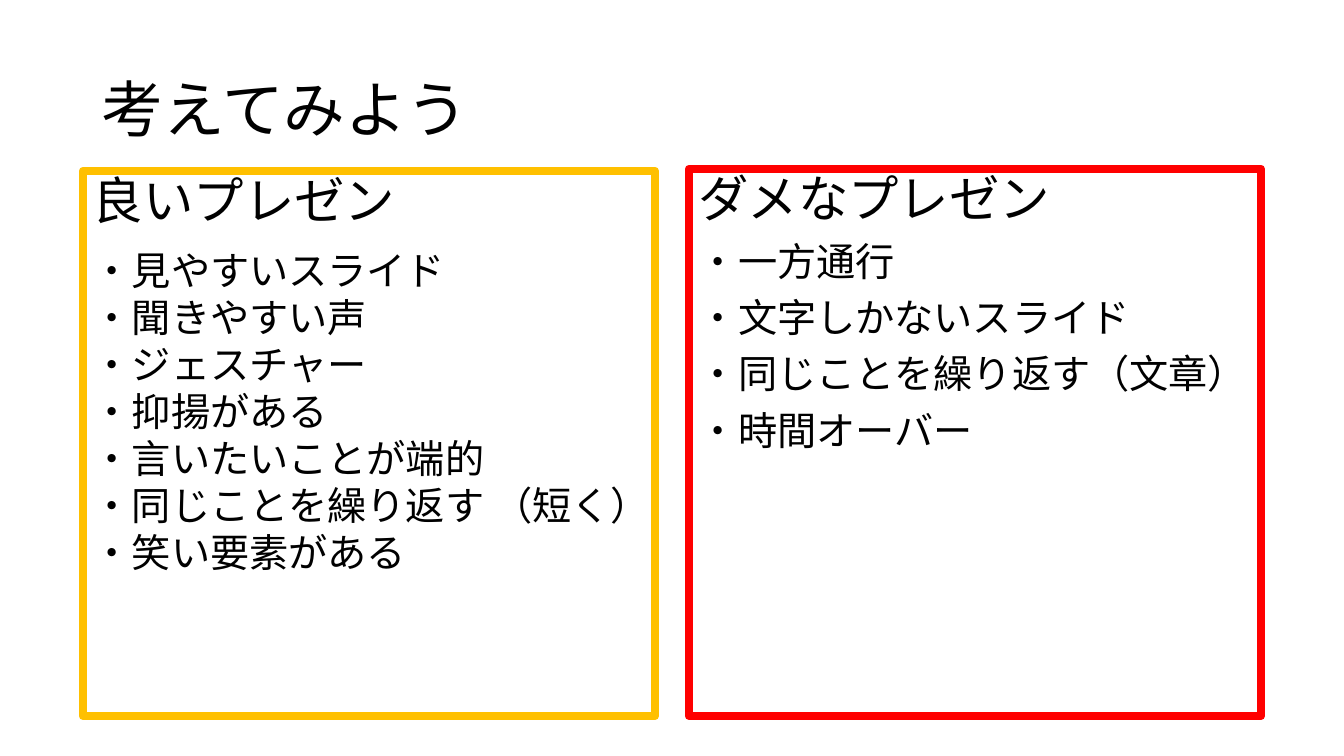
from pptx import Presentation
from pptx import util as u
from pptx.dml.color import RGBColor
from pptx.enum import shapes, text
from pptx.oxml.ns import qn
from lxml import etree

PX = 914400 / 100.8
FONT = "Noto Sans CJK JP"
COLORS = {"ink": "000000", "good": "FFC000", "bad": "FF0000"}

GOOD_POINTS = ["・見やすいスライド", "・聞きやすい声", "・ジェスチャー", "・抑揚がある",
               "・言いたいことが端的", "・同じことを繰り返す （短く）", "・笑い要素がある"]
BAD_POINTS = ["・一方通行", "・文字しかないスライド", "・同じことを繰り返す（文章）", "・時間オーバー"]


def px(length):
    return u.Emu(round(length * PX))


def color(name):
    return RGBColor.from_string(COLORS[name])


def write_lines(shape, lines, spacing=0.9, before=10, anchor=text.MSO_ANCHOR.TOP):
    """Fill a shape with (wording, point size) lines, one paragraph each."""
    frame = shape.text_frame
    frame.word_wrap = True
    frame.vertical_anchor = anchor
    for index, (wording, size) in enumerate(lines):
        para = frame.add_paragraph() if index else frame.paragraphs[0]
        para.text = wording
        para.alignment = text.PP_ALIGN.LEFT
        para.line_spacing = spacing
        para.space_before = u.Pt(before)
        para.font.size = u.Pt(size)
        para.font.name = FONT
        para.font.color.rgb = color("ink")
        defaults = para._p.pPr.find(qn("a:defRPr"))
        etree.SubElement(defaults, qn("a:ea"), typeface=FONT)


def add_text(page, box, lines, **layout):
    write_lines(page.shapes.add_textbox(*map(px, box)), lines, **layout)


def add_panel(page, box, outline, lines):
    panel = page.shapes.add_shape(shapes.MSO_SHAPE.RECTANGLE, *map(px, box))
    panel.shadow.inherit = False
    panel.fill.background()
    panel.line.color.rgb = color(outline)
    panel.line.width = u.Pt(6)
    etree.SubElement(panel.line._get_or_add_ln(), qn("a:round"))
    write_lines(panel, lines)


def add_comparison(page, box):
    """Place the good panel and the bad panel side by side."""
    left, top, width, height = box
    panel_width = 572
    add_panel(page, (left, top + 2, panel_width, height - 2), "good", [("良いプレゼン", 36)])
    add_panel(page, (left + width - panel_width, top, panel_width, height), "bad",
              [("ダメなプレゼン", 36)] + [(point, 28) for point in BAD_POINTS])
    add_text(page, (left, top + 72, 599, 343), [(point, 28) for point in GOOD_POINTS],
             spacing=1.0, before=0)


def main():
    deck = Presentation()
    deck.slide_width, deck.slide_height = px(1344), px(756)
    page = deck.slides.add_slide(deck.slide_layouts[6])
    add_text(page, (92, 40, 1159, 146), [("考えてみよう", 44)],
             before=0, anchor=text.MSO_ANCHOR.MIDDLE)
    add_comparison(page, (83, 169, 1178, 547))
    deck.save("out.pptx")


if __name__ == "__main__":
    main()
